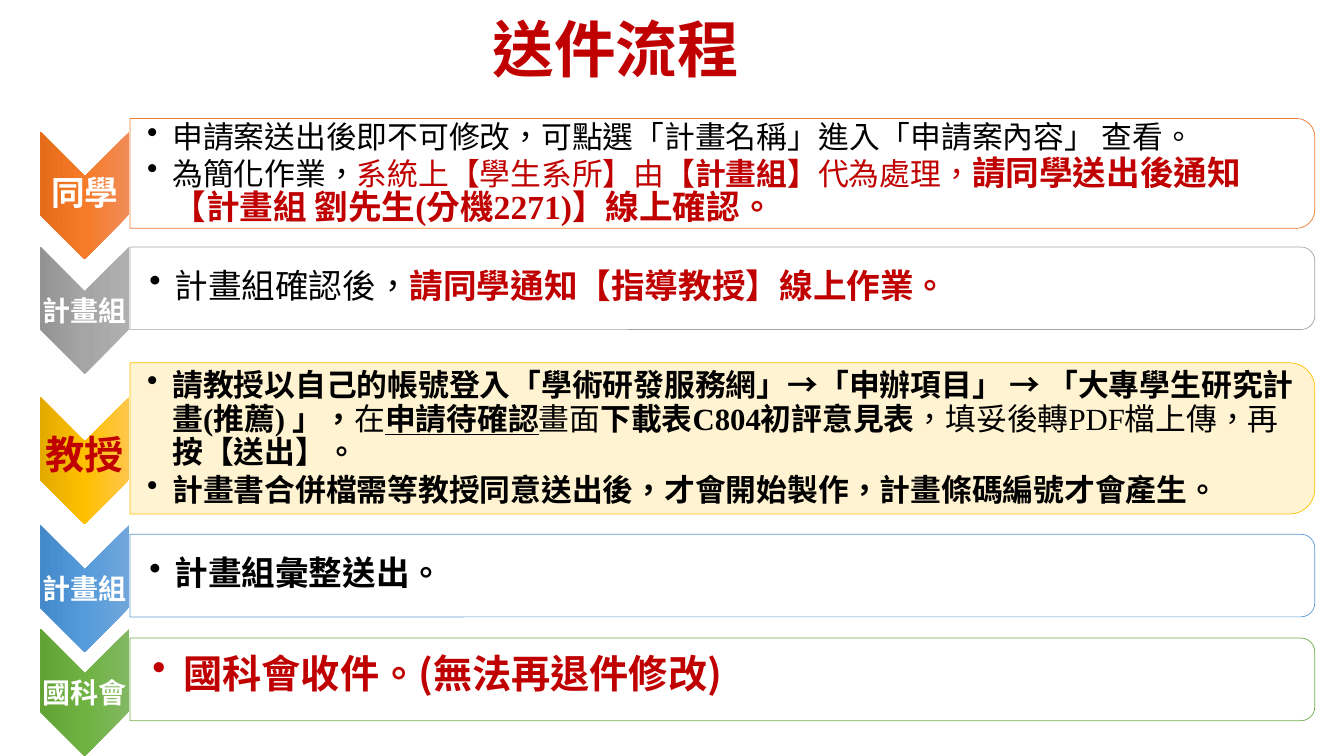
"""Builds the submission workflow slide: five chevron steps with text panels."""
import copy

import pptx
import pptx.dml.color
import pptx.enum.shapes
import pptx.enum.text
import pptx.oxml
import pptx.oxml.ns
import pptx.util

Inches, Pt = pptx.util.Inches, pptx.util.Pt
RGB = pptx.dml.color.RGBColor
SHAPE = pptx.enum.shapes.MSO_SHAPE
ALIGN = pptx.enum.text.PP_ALIGN
qn = pptx.oxml.ns.qn

RED, BLACK, WHITE = RGB(0xC0, 0, 0), RGB(0, 0, 0), RGB(255, 255, 255)
CREAM = RGB(0xFF, 0xF2, 0xCC)
ORANGE, GRAY, GOLD = RGB(0xED, 0x7D, 0x31), RGB(0xA5, 0xA5, 0xA5), RGB(0xFF, 0xC0, 0)
BLUE, GREEN = RGB(0x5B, 0x9B, 0xD5), RGB(0x70, 0xAD, 0x47)
SERIF, SANS = "Times New Roman", "Noto Sans CJK SC"

WIDE, HIGH = 13.33, 7.5
LEFT, SPAN = 1.29, 11.75
CHEV_L, CHEV_W, CHEV_H = 0.4, 0.88, 1.26
LABEL_H = 0.38

TITLE = (" 送件流程", 44, RED, "b")

# Each run: words, size, colour, style (b bold, u underline)
STEPS = [
    dict(name=("同學", 24, WHITE), mid=1.94, panel=(1.72, 1.09), line=ORANGE, back=WHITE,
         shades=("F18C57", "F67B28", "E56C19"), inset=0.17, indent=0.25, font=SERIF,
         text=[[("申請案送出後即不可修改，可點選「計畫名稱」進入「申請案內容」 查看。", 22, BLACK, "")],
               [("為簡化作業，", 22, BLACK, ""),
                ("系統上【學生系所】由", 22, RED, ""),
                ("【計畫組】", 22, RED, "b"),
                ("代為處理，", 22, RED, ""),
                ("請同學送出後通知【計畫組 劉先生(分機2271)】線上確認。", 24, RED, "b")]]),
    dict(name=("計畫組", 20, WHITE), mid=3.08, panel=(2.86, 0.82), line=GRAY, back=WHITE,
         shades=("AFAFAF", "A5A5A5", "939393"), inset=0.19, indent=0.25, font=SERIF,
         text=[[("計畫組確認後，", 24, BLACK, ""),
                ("請同學通知【指導教授】線上作業。", 24, RED, "b")]]),
    dict(name=("教授", 28, RED), mid=4.57, panel=(4.35, 1.5), line=GOLD, back=CREAM,
         shades=("FFC64B", "FFC000", "E3AB00"), inset=0.17, indent=0.25, font=SERIF,
         text=[[("請教授以自己的帳號登入「學術研發服務網」→「申辦項目」 → 「大專學生研究計畫(推薦) 」，",
                 22, BLACK, "b"),
                ("在", 22, BLACK, ""),
                ("申請待確認", 22, BLACK, "bu"),
                ("畫面", 22, BLACK, ""),
                ("下載表C804初評意見表", 22, BLACK, "b"),
                ("，填妥後轉PDF檔上傳，再", 22, BLACK, ""),
                ("按【送出】。", 22, BLACK, "b")],
               [("計畫書合併檔需等教授同意送出後，才會開始製作，計畫條碼編號才會產生。",
                 22, BLACK, "b")]]),
    dict(name=("計畫組", 20, WHITE), mid=5.84, panel=(5.71, 0.82), line=BLUE, back=WHITE,
         shades=("71A6DB", "559BDB", "448ACA"), inset=0.19, indent=0.25, font=SANS,
         text=[[("計畫組彙整送出。", 24, BLACK, "b")]]),
    dict(name=("國科會", 20, WHITE), mid=6.87, panel=(6.74, 0.82), line=GREEN, back=WHITE,
         shades=("81B861", "6FB242", "62A336"), inset=0.22, indent=0.31, font=SANS,
         text=[[("國科會收件。(無法再退件修改)", 28, RED, "b")]]),
]


def add_run(para, font, words, size, color, style):
    run = para.add_run()
    run.text = words
    run.font.size = Pt(size)
    run.font.name = font
    run.font.color.rgb = color
    run.font.bold = "b" in style
    run.font.underline = "u" in style
    props = run._r.get_or_add_rPr()
    props.set("lang", "zh-TW")
    east = props.makeelement(qn("a:ea"), {"typeface": SANS})
    props.find(qn("a:latin")).addnext(east)


def add_box(slide, left, mid, wide, high, pads):
    box = slide.shapes.add_textbox(
        Inches(left), Inches(mid - high / 2), Inches(wide), Inches(high))
    frame = box.text_frame
    frame.word_wrap = True
    frame.vertical_anchor = pptx.enum.text.MSO_ANCHOR.MIDDLE
    frame.margin_left, frame.margin_top, frame.margin_right, frame.margin_bottom = map(Inches, pads)
    return frame


def add_turned(slide, kind, left, mid, wide, high):
    """Places a shape turned by 90 degrees so it shows as wide by high."""
    shape = slide.shapes.add_shape(
        kind, Inches(left + (wide - high) / 2), Inches(mid - wide / 2),
        Inches(high), Inches(wide))
    shape.rotation = 90
    shape.shadow.inherit = False
    return shape


def add_chevron(slide, step):
    shape = add_turned(slide, SHAPE.CHEVRON, CHEV_L, step["mid"], CHEV_W, CHEV_H)
    shape.line.fill.background()
    shape.fill.gradient()
    shape.fill.gradient_angle = 270
    stops = shape._element.spPr.find(qn("a:gradFill")).find(qn("a:gsLst"))
    stops.append(copy.deepcopy(stops[-1]))
    for rank, (stop, shade) in enumerate(zip(shape.fill.gradient_stops, step["shades"])):
        stop.position = rank / 2
        stop.color.rgb = RGB.from_string(shade)
    pad = 0.01 if step["name"][1] == 20 else 0.02
    frame = add_box(slide, CHEV_L, step["mid"], CHEV_W, LABEL_H, [pad] * 4)
    para = frame.paragraphs[0]
    para.alignment = ALIGN.CENTER
    para.line_spacing = Pt(24)
    para.space_after = Pt(0.35 * step["name"][1])
    add_run(para, SERIF, *step["name"], "b")


def add_panel(slide, step):
    mid, high = step["panel"]
    shape = add_turned(slide, SHAPE.ROUND_2_SAME_RECTANGLE, LEFT, mid, SPAN, high)
    shape.fill.solid()
    shape.fill.fore_color.rgb = step["back"]
    tint = shape._element.spPr.find(qn("a:solidFill"))[0]
    tint.append(tint.makeelement(qn("a:alpha"), {"val": "90000"}))
    shape.line.color.rgb = step["line"]
    shape.line.width = Pt(0.5)
    frame = add_box(slide, LEFT, mid, SPAN - 0.05 * high, 0.9 * high,
                    (step["inset"], 0.02, 0.02, 0.02))
    for rank, runs in enumerate(step["text"]):
        para = frame.add_paragraph() if rank else frame.paragraphs[0]
        para.level = 1
        para.line_spacing = Pt(24)
        para.space_after = Pt(0.15 * runs[0][1])
        props = para._p.get_or_add_pPr()
        props.set("marL", str(Inches(step["indent"])))
        props.set("indent", str(-Inches(step["indent"])))
        props.append(props.makeelement(qn("a:buChar"), {"char": "•"}))
        for run in runs:
            add_run(para, step["font"], *run)


def main():
    deck = pptx.Presentation()
    deck.slide_width, deck.slide_height = Inches(WIDE), Inches(HIGH)
    slide = deck.slides.add_slide(deck.slide_layouts[6])
    for step in STEPS:
        add_chevron(slide, step)
        add_panel(slide, step)
    frame = add_box(slide, 4.65, 0.52, 3.21, 0.84, (0.1, 0.05, 0.1, 0.05))
    frame.paragraphs[0].line_spacing = 0.9
    add_run(frame.paragraphs[0], SANS, *TITLE)
    deck.save("out.pptx")


if __name__ == "__main__":
    main()
